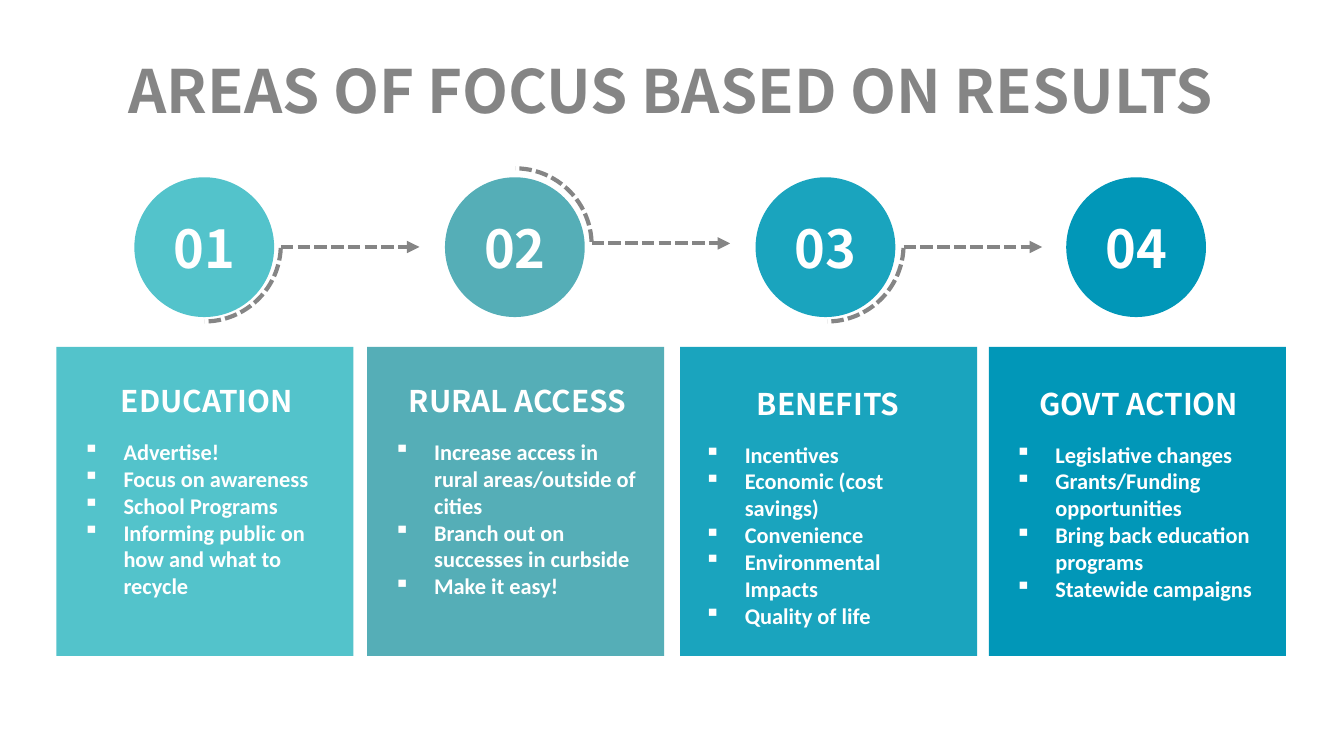
import pptx
import pptx.util
import pptx.dml.color
import pptx.enum.dml
import pptx.enum.shapes
import pptx.enum.text
import pptx.oxml
import pptx.oxml.ns

Pt = pptx.util.Pt
SHAPE = pptx.enum.shapes.MSO_SHAPE
ALIGN = pptx.enum.text.PP_ALIGN
ANCHOR = pptx.enum.text.MSO_ANCHOR
HEAD, BODY = "Noto Sans CJK SC", "Calibri"
COLORS = {"gray": "858585", "white": "FFFFFF", "aqua": "53C3CB",
          "sage": "55AEB7", "teal": "1AA4BE", "blue": "0197B8"}
TEXT_X, DISC_X, PITCH = 44.6, 72, 166.4
DISC, ARC = 74.9, 82.1
# heading, colour, card left, heading top, bullet points
AREAS = [
    ("EDUCATION", "aqua", 30.2, 205.2,
     ["Advertise!", "Focus on awareness", "School Programs",
      "Informing public on how and what to recycle"]),
    ("RURAL ACCESS", "sage", 196.7, 205.2,
     ["Increase access in rural areas/outside of cities",
      "Branch out on successes in curbside", "Make it easy!"]),
    ("BENEFITS", "teal", 364.4, 206.6,
     ["Incentives", "Economic (cost savings)", "Convenience",
      "Environmental Impacts", "Quality of life"]),
    ("GOVT ACTION", "blue", 529.8, 206.6,
     ["Legislative changes", "Grants/Funding opportunities",
      "Bring back education programs", "Statewide campaigns"]),
]
# arc left, arrow height, whether the arc is flipped to the top
LINKS = [(68.4, 132.3, False), (234.9, 130.4, True), (402, 132.3, False)]


def rgb(name):
    return pptx.dml.color.RGBColor.from_string(COLORS[name])


def style(frame, size, font, color, align):
    for para in frame.paragraphs:
        para.alignment = align
        for run in para.runs:
            run.font.size = Pt(size)
            run.font.name = font
            run.font.bold = True
            run.font.color.rgb = rgb(color)


def clear(frame):
    """Remove the insets and start the text at the top."""
    frame.margin_left = frame.margin_right = 0
    frame.margin_top = frame.margin_bottom = 0
    frame.vertical_anchor = ANCHOR.TOP
    frame.word_wrap = True


def add_title(slide, text):
    title = slide.shapes.title
    title.left, title.top = Pt(30.2), Pt(28.8)
    title.width, title.height = Pt(658.8), Pt(32.4)
    frame = title.text_frame
    frame.text = text
    clear(frame)
    style(frame, 32, HEAD, "gray", ALIGN.CENTER)


def add_block(slide, kind, x, y, w, h, color):
    block = slide.shapes.add_shape(kind, Pt(x), Pt(y), Pt(w), Pt(h))
    block.shadow.inherit = False
    block.fill.solid()
    block.fill.fore_color.rgb = rgb(color)
    block.line.fill.background()
    return block


def add_disc(slide, x, text, color):
    disc = add_block(slide, SHAPE.OVAL, x, 95, DISC, DISC, color)
    frame = disc.text_frame
    frame.text = text
    frame.vertical_anchor = ANCHOR.MIDDLE
    style(frame, 28, HEAD, "white", ALIGN.CENTER)


def add_text(slide, x, y, h, text, size, font, align):
    box = slide.shapes.add_textbox(Pt(x), Pt(y), Pt(132.5), Pt(h))
    frame = box.text_frame
    clear(frame)
    frame.text = text
    style(frame, size, font, "white", align)
    return frame


def add_list(slide, x, y, points):
    frame = add_text(slide, x, y, 116, "\n".join(points), 12, BODY, ALIGN.LEFT)
    for para in frame.paragraphs:
        props = para._p.get_or_add_pPr()
        props.set("marL", str(Pt(21.6)))
        props.set("indent", str(-Pt(21.6)))
        mark = pptx.oxml.ns.qn("a:buChar")
        props.append(props.makeelement(mark, {"char": "▪"}))


def dash(line):
    line.color.rgb = rgb("gray")
    line.width = Pt(2.25)
    line.dash_style = pptx.enum.dml.MSO_LINE.SQUARE_DOT


def add_link(slide, x, y, flip):
    """Draw a dashed quarter arc and the arrow that leaves it."""
    group = slide.shapes.add_group_shape()
    start = x + ARC
    arrow = group.shapes.add_connector(
        pptx.enum.shapes.MSO_CONNECTOR.STRAIGHT,
        Pt(start), Pt(y), Pt(start + 74.2), Pt(y))
    dash(arrow.line)
    qn = pptx.oxml.ns.qn
    props = arrow._element.spPr
    line = arrow.line._get_or_add_ln()
    line.append(line.makeelement(qn("a:tailEnd"), {"type": "triangle"}))
    props.append(props.makeelement(qn("a:effectLst"), {}))

    arc = group.shapes.add_shape(SHAPE.ARC, Pt(x), Pt(90.2), Pt(ARC), Pt(ARC))
    arc.shadow.inherit = False
    arc.fill.background()
    arc.adjustments[0] = 1.4
    arc.adjustments[1] = 53.93
    dash(arc.line)
    if flip:
        arc._element.spPr.xfrm.set("flipV", "1")


def main():
    deck = pptx.Presentation()
    deck.slide_width, deck.slide_height = Pt(720), Pt(405)
    slide = deck.slides.add_slide(deck.slide_layouts[5])
    add_title(slide, "AREAS OF FOCUS BASED ON RESULTS")
    for i, (head, color, left, top, points) in enumerate(AREAS):
        add_block(slide, SHAPE.RECTANGLE, left, 185.8, 159.1, 165.6, color)
        add_disc(slide, DISC_X + i * PITCH, f"{i + 1:02}", color)
        x = TEXT_X + i * PITCH
        add_text(slide, x, top, 19.4, head, 16, HEAD, ALIGN.CENTER)
        add_list(slide, x, top + 29.5, points)
    for link in LINKS:
        add_link(slide, *link)
    deck.save("out.pptx")


if __name__ == "__main__":
    main()
